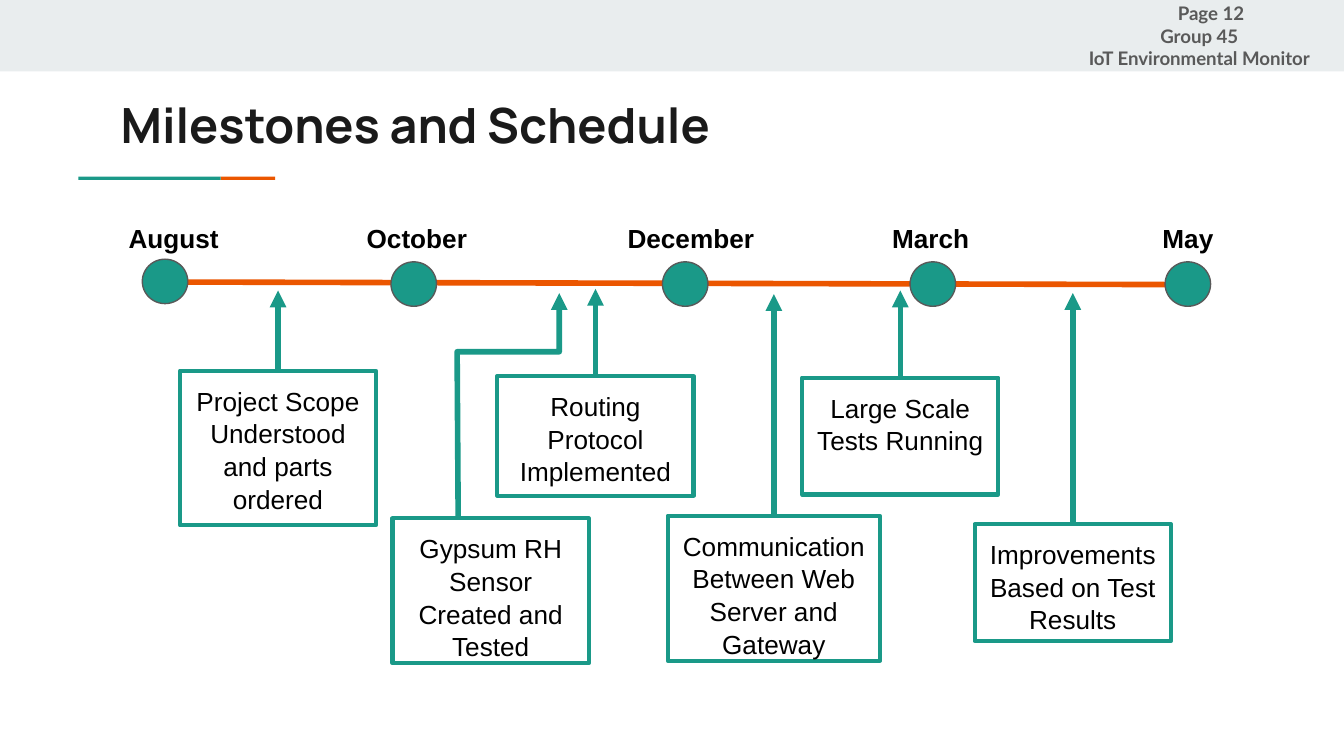
import pptx
import pptx.util
import pptx.dml.color
import pptx.enum.shapes
import pptx.enum.text
import pptx.oxml.ns
from lxml import etree

Cm, Pt = pptx.util.Cm, pptx.util.Pt
RGBColor = pptx.dml.color.RGBColor
SHAPE = pptx.enum.shapes.MSO_SHAPE
STRAIGHT = pptx.enum.shapes.MSO_CONNECTOR.STRAIGHT
ALIGN = pptx.enum.text.PP_ALIGN
ANCHOR = pptx.enum.text.MSO_ANCHOR
qn = pptx.oxml.ns.qn

TEAL = RGBColor(0x1A, 0x99, 0x88)
ORANGE = RGBColor(0xEB, 0x56, 0x00)
BAND = RGBColor(0xE9, 0xED, 0xEE)
INK = RGBColor(0x1A, 0x1A, 0x1A)
GREY = RGBColor(0x59, 0x59, 0x59)
BLACK = RGBColor(0, 0, 0)

# Content, lengths in cm
TITLE = "Milestones and Schedule"
HEADER = ["Page 12", "Group 45", "IoT Environmental Monitor"]
TIMELINE = (3.0, 5.33, 22.53, 5.38)
# month, dot centre x and y, label left and width
MONTHS = [
    ("August", 3.12, 5.32, 2.18, 2.49),
    ("October", 7.82, 5.37, 6.68, 3.02),
    ("December", 12.95, 5.37, 11.61, 3.02),
    ("March", 17.63, 5.37, 16.61, 3.02),
    ("May", 22.45, 5.37, 21.72, 2.49),
]
# milestone, left, top, width, height, y of the arrow tip (None: bent arrow)
MILESTONES = [
    ("Project Scope Understood and parts ordered", 3.4, 7.01, 3.71, 2.92, 5.49),
    ("Routing Protocol Implemented", 9.4, 7.11, 3.71, 2.26, 5.46),
    ("Gypsum RH Sensor Created and Tested", 7.42, 9.8, 3.71, 2.74, None),
    ("Large Scale Tests Running", 15.16, 7.14, 3.71, 2.21, 5.49),
    ("Communication Between Web Server and Gateway", 12.62, 9.75, 4.01, 2.74, 5.56),
    ("Improvements Based on Test Results", 18.42, 9.91, 3.71, 2.21, 5.54),
]
GYPSUM_ARROW = [(8.66, 9.8), (8.64, 6.65), (10.57, 6.65), (10.57, 5.54)]
DOT_WIDTH, DOT_HEIGHT = 0.86, 0.84

deck = pptx.Presentation()
deck.slide_width, deck.slide_height = Cm(25.4), Cm(14.29)
slide = deck.slides.add_slide(deck.slide_layouts[6])
shapes = slide.shapes


def add_block(kind, left, top, width, height, fill=None, line=None, weight=0):
    block = shapes.add_shape(kind, Cm(left), Cm(top), Cm(width), Cm(height))
    block.shadow.inherit = False
    if fill is None:
        block.fill.background()
    else:
        block.fill.solid()
        block.fill.fore_color.rgb = fill
    if line is None:
        block.line.fill.background()
    else:
        block.line.color.rgb = line
        block.line.width = Pt(weight)
    return block


def write(holder, lines, font, size, color, bold=False, align=ALIGN.LEFT,
          anchor=ANCHOR.TOP, spacing=1.0):
    frame = holder.text_frame
    frame.word_wrap = True
    frame.vertical_anchor = anchor
    frame.margin_left = frame.margin_right = Cm(0.25)
    frame.margin_top = frame.margin_bottom = Cm(0.25)
    for i, line in enumerate(lines):
        paragraph = frame.add_paragraph() if i else frame.paragraphs[0]
        paragraph.alignment = align
        paragraph.line_spacing = spacing
        run = paragraph.add_run()
        run.text = line
        run.font.name, run.font.size, run.font.bold = font, Pt(size), bold
        run.font.color.rgb = color
    return frame


def add_text(left, top, width, height, lines, *style, **options):
    holder = shapes.add_textbox(Cm(left), Cm(top), Cm(width), Cm(height))
    return write(holder, lines, *style, **options)


def add_line(x1, y1, x2, y2, color):
    line = shapes.add_connector(STRAIGHT, Cm(x1), Cm(y1), Cm(x2), Cm(y2))
    line.line.color.rgb = color
    line.line.width = Pt(3)
    etree.SubElement(line._element.spPr, qn("a:effectLst"))
    return line


def add_arrowhead(arrow):
    etree.SubElement(arrow.line._get_or_add_ln(), qn("a:tailEnd"), type="triangle")


# Header band, title and its two-colour rule
add_block(SHAPE.RECTANGLE, 0, 0, 25.4, 1.35, BAND)
add_block(SHAPE.RECTANGLE, 4.17, 3.34, 1.03, 0.06, ORANGE)
add_block(SHAPE.RECTANGLE, 1.48, 3.34, 2.69, 0.06, TEAL)
add_text(2.03, 1.55, 21.36, 1.5, [TITLE], "Manrope", 26, INK, bold=True)

# Timeline with months
add_line(*TIMELINE, ORANGE)
for month, x, y, label_left, label_width in MONTHS:
    add_block(SHAPE.OVAL, x - DOT_WIDTH / 2, y - DOT_HEIGHT / 2,
              DOT_WIDTH, DOT_HEIGHT, TEAL, GREY, 0.75)
    add_text(label_left, 3.94, label_width, 1.09, [month], "Arial", 14, BLACK,
             bold=True, spacing=1.04)

# Milestone boxes with arrows up to the timeline
for milestone, left, top, width, height, tip in MILESTONES:
    box = add_block(SHAPE.RECTANGLE, left, top, width, height, None, TEAL, 2.25)
    write(box, [milestone], "Arial", 14, BLACK, align=ALIGN.CENTER, spacing=1.04)
    if tip is not None:
        middle = left + width / 2
        arrow = add_line(middle, top, middle, tip, TEAL)
        arrow.begin_connect(box, 0)
        add_arrowhead(arrow)

# Bent arrow of the gypsum sensor
start, *bends = [(Cm(x), Cm(y)) for x, y in GYPSUM_ARROW]
builder = shapes.build_freeform(*start)
builder.add_line_segments(bends, close=False)
gypsum_arrow = builder.convert_to_shape()
gypsum_arrow.shadow.inherit = False
gypsum_arrow.fill.background()
gypsum_arrow.line.color.rgb = TEAL
gypsum_arrow.line.width = Pt(3)
add_arrowhead(gypsum_arrow)

# Page header: the first line is indented, the others centred
header = add_text(20.14, 0.13, 5.05, 1.09, HEADER, "Lato", 10, GREY, bold=True,
                  align=ALIGN.CENTER, anchor=ANCHOR.MIDDLE)
page_line = header.paragraphs[0]
page_line.alignment = ALIGN.LEFT
page_line._p.get_or_add_pPr().set("indent", str(Cm(1.87)))

deck.save("out.pptx")
